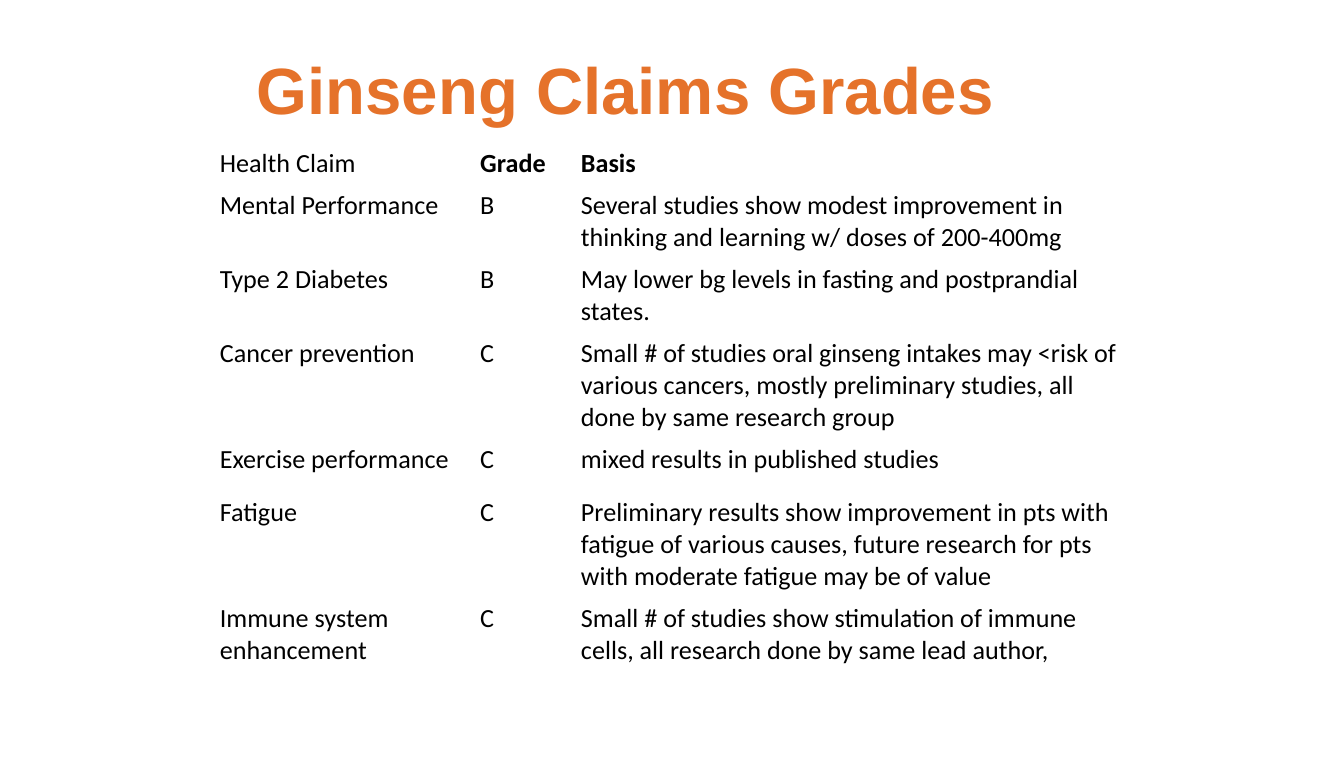
"""Build a slide that grades the health claims made for ginseng."""
from lxml import etree
from pptx import Presentation
from pptx.dml.color import RGBColor
from pptx.enum import text
from pptx.oxml import ns
from pptx.util import Pt

CLAIMS = [
    ("Health Claim", "Grade", "Basis"),
    ("Mental Performance", "B", "Several studies show modest improvement in thinking and learning w/ doses of 200-400mg"),
    ("Type 2 Diabetes", "B", "May lower bg levels in fasting and postprandial states."),
    ("Cancer prevention", "C", "Small # of studies oral ginseng intakes may <risk of various cancers, mostly preliminary studies, all done by same research group"),
    ("Exercise performance", "C", "mixed results in published studies"),
    ("Fatigue", "C", "Preliminary results show improvement in pts with fatigue of various causes, future research for pts with moderate fatigue may be of value"),
    ("Immune system enhancement", "C", "Small # of studies show stimulation of immune cells, all research done by same lead author,"),
]
COLUMN_WIDTHS = [139.5, 54, 301.5]
ROW_HEIGHTS = [21.6, 38.2, 38.2, 54, 28.8, 54.7, 51.8]


def style_font(font, name, size, color, bold):
    font.name = name
    font.size = Pt(size)
    font.color.rgb = RGBColor.from_string(color)
    font.bold = bold


def add_border(cell, side, width, color):
    properties = cell._tc.get_or_add_tcPr()
    line = etree.SubElement(properties, ns.qn(f"a:{side}"), w=str(Pt(width)))
    fill = etree.SubElement(line, ns.qn("a:solidFill"))
    etree.SubElement(fill, ns.qn("a:srgbClr"), val=color)


presentation = Presentation()
presentation.slide_width = Pt(720)
presentation.slide_height = Pt(405.36)
slide = presentation.slides.add_slide(presentation.slide_layouts[6])

title = slide.shapes.add_textbox(Pt(130.5), Pt(13.5), Pt(459), Pt(67.5))
title.text_frame.word_wrap = True
title.text_frame.vertical_anchor = text.MSO_ANCHOR.MIDDLE
title.text_frame.text = "Ginseng Claims Grades"
style_font(title.text_frame.paragraphs[0].runs[0].font, "Arial", 35, "E5722A", True)

table = slide.shapes.add_table(
    len(CLAIMS), len(COLUMN_WIDTHS), Pt(112), Pt(76), Pt(sum(COLUMN_WIDTHS)), Pt(sum(ROW_HEIGHTS))
).table
table.first_row = False
table.horz_banding = False
for column, width in zip(table.columns, COLUMN_WIDTHS):
    column.width = Pt(width)

for row_index, (row, height, claim) in enumerate(zip(table.rows, ROW_HEIGHTS, CLAIMS)):
    row.height = Pt(height)
    for column_index, (cell, wording) in enumerate(zip(row.cells, claim)):
        cell.text_frame.text = wording
        cell.margin_left = cell.margin_right = Pt(5.76)
        cell.margin_top = cell.margin_bottom = Pt(3)
        bold = row_index == 0 and column_index > 0
        style_font(cell.text_frame.paragraphs[0].runs[0].font, "Calibri", 14, "000000", bold)
        for side in ("lnL", "lnR", "lnT", "lnB"):
            heavy = (row_index, side) in ((0, "lnB"), (1, "lnT"))
            add_border(cell, side, 3 if heavy else 1, "FFFFFF")
        cell.fill.background()

presentation.save("out.pptx")
